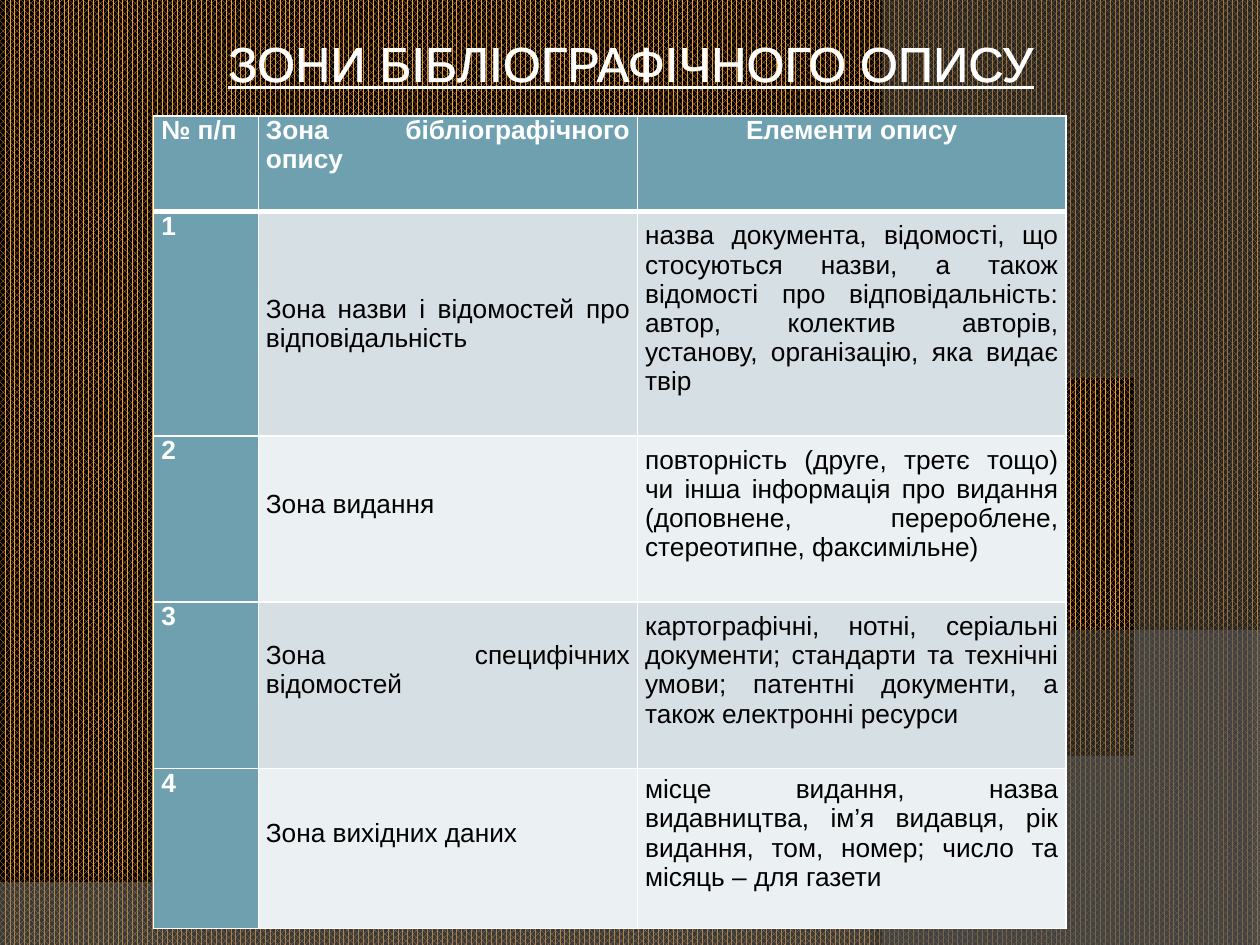
"""Build a slide with a table of the areas of a bibliographic description."""
import dataclasses

import pptx
import pptx.dml.color
import pptx.enum.dml
import pptx.enum.text
import pptx.oxml
import pptx.oxml.ns
import pptx.util

Inches, Pt = pptx.util.Inches, pptx.util.Pt
RGB = pptx.dml.color.RGBColor.from_string
ALIGN = pptx.enum.text.PP_ALIGN
ANCHOR = pptx.enum.text.MSO_ANCHOR
NS = pptx.oxml.ns.nsdecls("a")


@dataclasses.dataclass(frozen=True)
class Theme:
    font: str = "Arial"
    title_size: float = 28
    cell_size: float = 15
    white: str = "FFFFFF"
    black: str = "000000"
    stripe: str = "F19D2D"
    accent: str = "6EA0B0"
    bands: tuple = ("D5DFE4", "EBF0F2")


THEME = Theme()
TITLE = "ЗОНИ БІБЛІОГРАФІЧНОГО ОПИСУ"
HEADER = ("№ п/п", "Зона бібліографічного опису", "Елементи опису")
ZONES = [
    ("Зона назви і відомостей про відповідальність",
     "назва документа, відомості, що стосуються назви, а також відомості про "
     "відповідальність: автор, колектив авторів, установу, організацію, яка видає твір"),
    ("Зона видання",
     "повторність (друге, третє тощо) чи інша інформація про видання "
     "(доповнене, перероблене, стереотипне, факсимільне)"),
    ("Зона специфічних відомостей",
     "картографічні, нотні, серіальні документи; стандарти та технічні умови; "
     "патентні документи, а також електронні ресурси"),
    ("Зона вихідних даних",
     "місце видання, назва видавництва, ім’я видавця, рік видання, том, номер; "
     "число та місяць – для газети"),
]
COLS = (0.83, 3.01, 3.4)
ROWS = (0.76, 1.78, 1.32, 1.32, 1.27)
TABLE_AT = (1.22, 0.92)
CELL_INSET, BOTTOM_GAP = 0.06, 0.24
WAVES = [
    dict(curve=((10, 5.2), (5.59, 7.29), (3.91, 7.19), (0, 7.05)),
         corners=[(0, 7.5), (10, 7.5)], color="7F7F7F", alpha=45,
         shadow=dict(alpha=35, dist=3.5, angle=270)),
    dict(curve=((7.03, 7.5), (8.91, 6.19), (9.47, 2.75), (6.68, 0)),
         corners=[(10, 0), (10, 7.5)], color="5E5E5E", alpha=40,
         shadow=dict(alpha=45, dist=4, angle=180)),
]


def bezier(points, steps=40):
    """Return points along a cubic curve."""
    weights = [((1 - t) ** 3, 3 * t * (1 - t) ** 2, 3 * t * t * (1 - t), t ** 3)
               for t in (i / steps for i in range(steps + 1))]
    return [tuple(sum(w * p[axis] for w, p in zip(ws, points)) for axis in (0, 1))
            for ws in weights]


def add_wave(slide, curve, corners, color, alpha, shadow):
    """Add a translucent curved area with a soft shadow."""
    start, *rest = bezier(curve)
    builder = slide.shapes.build_freeform(*start, scale=Inches(1))
    builder.add_line_segments(rest + corners, close=True)
    sp = builder.convert_to_shape()
    sp.shadow.inherit = False
    sp.line.fill.background()
    sp.fill.solid()
    sp.fill.fore_color.rgb = RGB(color)
    clr = next(sp.element.spPr.iter(pptx.oxml.ns.qn("a:srgbClr")))
    clr.append(pptx.oxml.parse_xml(f'<a:alpha {NS} val="{alpha * 1000}"/>'))
    effects = sp.element.spPr.find(pptx.oxml.ns.qn("a:effectLst"))
    effects.append(pptx.oxml.parse_xml(
        f'<a:outerShdw {NS} blurRad="{Pt(4)}" dist="{Pt(shadow["dist"])}" '
        f'dir="{shadow["angle"] * 60000}" algn="ctr" rotWithShape="0">'
        f'<a:srgbClr val="{THEME.black}"><a:alpha val="{shadow["alpha"] * 1000}"/>'
        '</a:srgbClr></a:outerShdw>'))


def line_xml(tag, width):
    """Return a white line element."""
    return pptx.oxml.parse_xml(
        f'<a:{tag} {NS} w="{Pt(width)}"><a:solidFill><a:srgbClr val="{THEME.white}"/>'
        f'</a:solidFill></a:{tag}>')


def style(p, size, color, align, bold=False):
    """Format one paragraph."""
    p.alignment = align
    p.font.name, p.font.size, p.font.bold = THEME.font, Pt(size), bold
    p.font.color.rgb = RGB(color)


def format_title(title):
    """Place and fill the title placeholder."""
    title.left, title.top = Inches(0.2), Inches(0.21)
    title.width, title.height = Inches(9.61), Inches(0.57)
    tf = title.text_frame
    tf.word_wrap = True
    tf.auto_size = pptx.enum.text.MSO_AUTO_SIZE.SHAPE_TO_FIT_TEXT
    p = tf.paragraphs[0]
    r = p.add_run()
    r.text = TITLE
    style(p, THEME.title_size, THEME.white, ALIGN.CENTER)
    r.font.underline = True
    r.font.element.insert(0, line_xml("ln", 1.45)) if hasattr(r.font, "element") else \
        r._r.get_or_add_rPr().insert(0, line_xml("ln", 1.45))


def format_cell(cell, text, row, col):
    """Fill one table cell and draw its borders."""
    heading = row == 0 or col == 0
    cell.text = text
    cell.margin_left = cell.margin_right = Inches(CELL_INSET)
    cell.margin_top = 0
    cell.margin_bottom = Inches(0 if col == 0 or (row, col) == (1, 1) else BOTTOM_GAP)
    cell.vertical_anchor = ANCHOR.TOP if heading else ANCHOR.MIDDLE
    style(cell.text_frame.paragraphs[0], THEME.cell_size,
          THEME.white if heading else THEME.black,
          ALIGN.CENTER if (row, col) == (0, 2) else ALIGN.JUSTIFY, heading)
    widths = dict(lnL=1, lnR=1, lnT=3 if row == 1 else 1, lnB=3 if row == 0 else 1)
    for tag, width in widths.items():
        cell._tc.get_or_add_tcPr().append(line_xml(tag, width))
    cell.fill.solid()
    cell.fill.fore_color.rgb = RGB(THEME.accent if heading else THEME.bands[(row - 1) % 2])


def add_zone_table(slide):
    """Add the table of areas and their elements."""
    rows = [HEADER] + [(str(n), *zone) for n, zone in enumerate(ZONES, 1)]
    size = (sum(COLS), sum(ROWS))
    table = slide.shapes.add_table(
        len(ROWS), len(COLS), *map(Inches, TABLE_AT + size)).table
    for column, width in zip(table.columns, COLS):
        column.width = Inches(width)
    for i, (texts, height) in enumerate(zip(rows, ROWS)):
        table.rows[i].height = Inches(height)
        for j, text in enumerate(texts):
            format_cell(table.cell(i, j), text, i, j)


def main():
    """Build and save the slide."""
    prs = pptx.Presentation()
    prs.slide_width, prs.slide_height = Inches(10), Inches(7.5)
    slide = prs.slides.add_slide(prs.slide_layouts[5])
    fill = slide.background.fill
    fill.patterned()
    fill.pattern = pptx.enum.dml.MSO_PATTERN.PERCENT_75
    fill.fore_color.rgb, fill.back_color.rgb = RGB(THEME.stripe), RGB(THEME.black)
    for wave in WAVES:
        add_wave(slide, **wave)
    title = slide.shapes.title
    title.element.getparent().append(title.element)
    format_title(title)
    add_zone_table(slide)
    prs.save("out.pptx")


if __name__ == "__main__":
    main()
